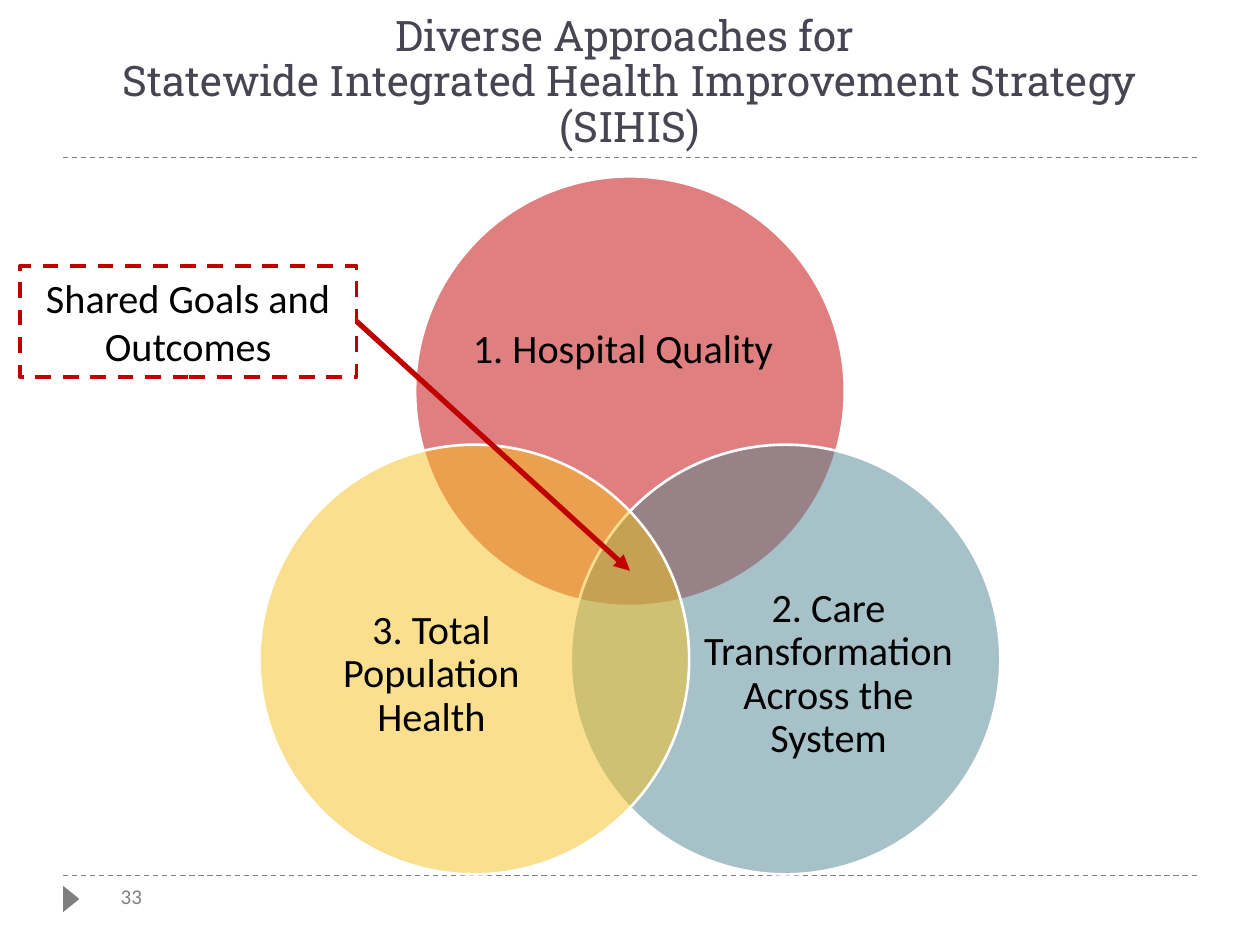
from collections import namedtuple

from lxml import etree
from pptx import Presentation
from pptx.dml.color import RGBColor
from pptx.enum.dml import MSO_LINE
from pptx.enum.shapes import MSO_CONNECTOR, MSO_SHAPE
from pptx.enum.text import MSO_ANCHOR, PP_ALIGN
from pptx.oxml.ns import qn
from pptx.util import Inches, Pt

STRAIGHT = MSO_CONNECTOR.STRAIGHT
OVAL, RECTANGLE = MSO_SHAPE.OVAL, MSO_SHAPE.RECTANGLE
TRIANGLE = MSO_SHAPE.ISOSCELES_TRIANGLE
DASH = MSO_LINE.DASH
TOP, MIDDLE, BOTTOM = MSO_ANCHOR.TOP, MSO_ANCHOR.MIDDLE, MSO_ANCHOR.BOTTOM
LEFT, CENTER = PP_ALIGN.LEFT, PP_ALIGN.CENTER

COLORS = {
    "title": "464653", "muted": "7F7F7F", "text": "000000", "white": "FFFFFF",
    "red": "C00000", "teal": "518592", "gold": "F6C120",
}
BODY_FONT, TITLE_FONT = "Calibri", "Roboto Slab"
PADDING = (0.1, 0.05)

Box = namedtuple("Box", "left top width height")
SLIDE = Box(0, 0, 10, 7.5)


def part(box, x, y, w, h):
    """Box inside another one, given as shares of its size."""
    return Box(box.left + x * box.width, box.top + y * box.height,
               w * box.width, h * box.height)


def emu(box):
    return [Inches(length) for length in box]


def rgb(name):
    return RGBColor.from_string(COLORS[name])


def apply(target, formats):
    for name, value in formats.items():
        setattr(target, name, value)


def set_line(line, color, width, dash=None):
    line.color.rgb = rgb(color)
    apply(line, {"width": Pt(width), "dash_style": dash})


def write(shape, text, size, color="text", font=BODY_FONT, align=CENTER,
          anchor=MIDDLE, spacing=1.0, padding=PADDING):
    side, end = (Inches(inset) for inset in padding)
    frame = shape.text_frame
    apply(frame, {"word_wrap": True, "vertical_anchor": anchor,
                  "margin_left": side, "margin_right": side,
                  "margin_top": end, "margin_bottom": end, "text": text})
    paragraph = frame.paragraphs[0]
    apply(paragraph, {"alignment": align, "line_spacing": spacing})
    for run in paragraph.runs:
        apply(run.font, {"name": font, "size": Pt(size)})
        run.font.color.rgb = rgb(color)


def add_text(slide, box, text, size, **style):
    write(slide.shapes.add_textbox(*emu(box)), text, size, **style)


def add_shape(slide, kind, box, fill=None):
    shape = slide.shapes.add_shape(kind, *emu(box))
    shape.shadow.inherit = False
    if fill:
        shape.fill.solid()
        shape.fill.fore_color.rgb = rgb(fill)
    else:
        shape.fill.background()
    return shape


def add_line(slide, start, end, color, width, dash=None, arrow=False):
    connector = slide.shapes.add_connector(STRAIGHT, *emu(start + end))
    set_line(connector.line, color, width, dash)
    properties = connector._element.spPr
    if arrow:
        etree.SubElement(properties.find(qn("a:ln")), qn("a:tailEnd"), type="triangle")
    etree.SubElement(properties, qn("a:effectLst"))


def add_rule(slide, box, y):
    add_line(slide, (box.left, y), (box.left + box.width, y), "muted", 0.75, DASH)


def header(slide, box):
    add_rule(slide, box, box.top + box.height)
    add_text(slide, box,
             "Diverse Approaches for \v"
             "Statewide Integrated Health Improvement Strategy (SIHIS)",
             24, color="title", font=TITLE_FONT, anchor=BOTTOM, spacing=0.9)


def footer(slide, box):
    add_rule(slide, box, box.top)
    # Page marker, turned to point at the number
    marker = add_shape(slide, TRIANGLE, Box(box.left - 0.04, box.top + 0.12, 0.21, 0.13), "muted")
    marker.rotation = 90
    marker.line.fill.background()
    add_text(slide, part(box, 0.04, 0.03, 0.05, 0.97), "33", 12,
             color="muted", align=LEFT, anchor=TOP)


def venn(slide, box):
    diameter = 0.58 * box.width
    right, low = box.width - diameter, box.height - diameter
    # Offset of each circle, its colour, and its label as shares of the circle
    circles = [
        (right / 2, 0, "red", "1. Hospital Quality ", (0.13, 0.18, 0.73, 0.45)),
        (right, low, "teal", "2. Care Transformation Across the System",
         (0.3, 0.26, 0.6, 0.55)),
        (0, low, "gold", "3. Total Population Health", (0.1, 0.26, 0.6, 0.55)),
    ]
    for x, y, color, label, label_area in circles:
        area = Box(box.left + x, box.top + y, diameter, diameter)
        circle = add_shape(slide, OVAL, area, color)
        set_line(circle.line, "white", 1.5)
        solid = circle._element.spPr.find(qn("a:solidFill"))
        etree.SubElement(solid[0], qn("a:alpha"), val="50000")
        add_text(slide, part(area, *label_area), label, 23, spacing=0.9, padding=(0, 0))


def callout(slide, box, target):
    frame = add_shape(slide, RECTANGLE, box)
    set_line(frame.line, "red", 2.25, DASH)
    write(frame, "Shared Goals and Outcomes", 23)
    start = (box.left + box.width, box.top + box.height / 2)
    add_line(slide, start, target, "red", 3, arrow=True)


def main():
    deck = Presentation()
    deck.slide_width, deck.slide_height = Inches(SLIDE.width), Inches(SLIDE.height)
    slide = deck.slides.add_slide(deck.slide_layouts[6])

    margin, content = 0.05, 0.9
    header(slide, Box(margin * SLIDE.width, 0.17, content * SLIDE.width, 1.08))
    footer(slide, Box(margin * SLIDE.width, 6.95, content * SLIDE.width, 0.31))
    venn(slide, Box(2.06, 1.4, 5.88, 5.54))
    callout(slide, Box(0.16, 2.11, 2.67, 0.88), (SLIDE.width / 2, 4.53))

    deck.save("out.pptx")


if __name__ == "__main__":
    main()
